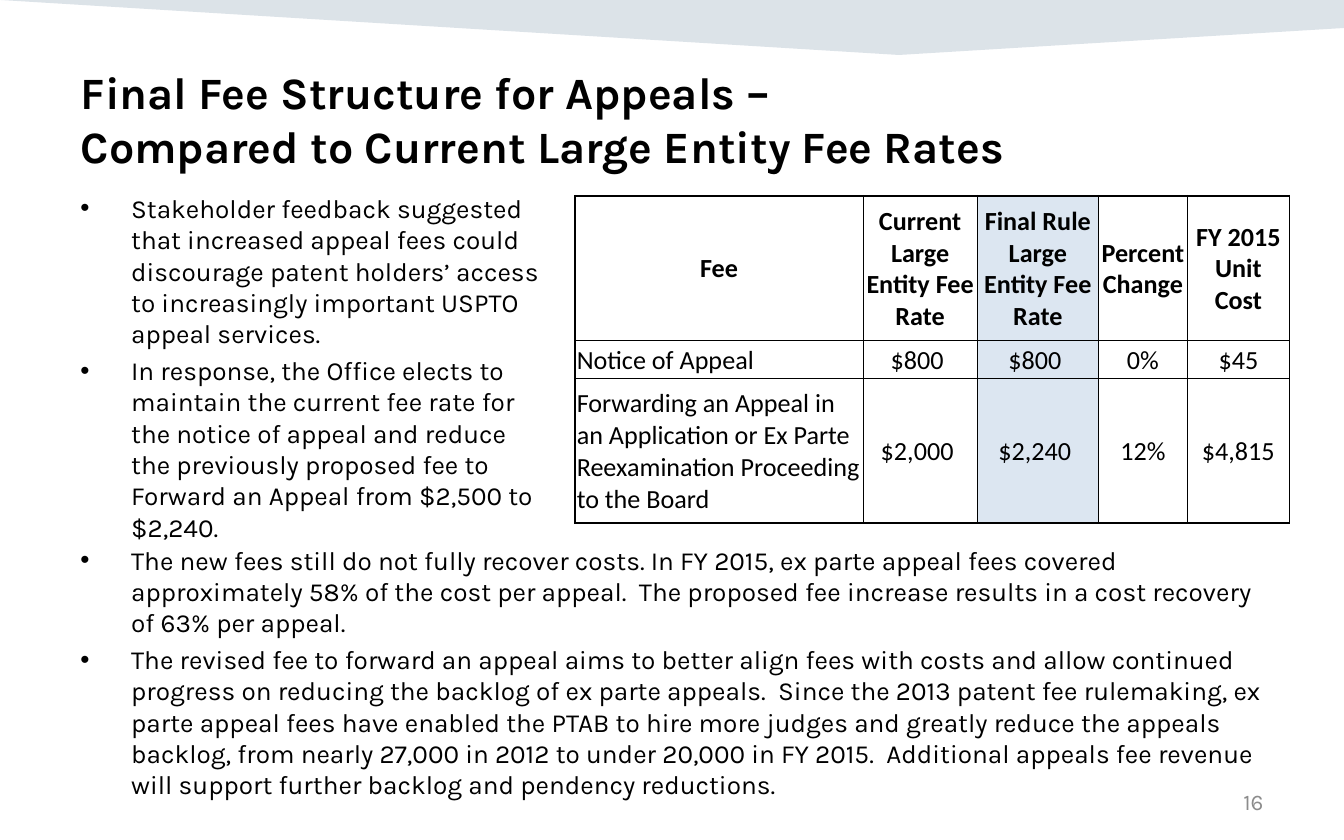
from dataclasses import dataclass

import lxml.etree
import pptx
import pptx.dml.color
import pptx.enum.text
import pptx.oxml.ns
import pptx.util

Cm = pptx.util.Cm
Pt = pptx.util.Pt
Align = pptx.enum.text.PP_ALIGN
Anchor = pptx.enum.text.MSO_ANCHOR
qn = pptx.oxml.ns.qn


@dataclass(frozen=True)
class Theme:
    text: str = "000000"
    muted: str = "8C8C8C"
    banner: str = "164469"
    highlight: str = "DCE6F1"
    white: str = "FFFFFF"
    font: str = "Karla"
    table_font: str = "Calibri"
    title_size: float = 24
    body_size: float = 14
    number_size: float = 12
    thin: float = 0.5
    thick: float = 1


@dataclass(frozen=True)
class Box:
    """A rectangle in centimetres."""
    left: float
    top: float
    width: float
    height: float

    def lengths(self) -> tuple:
        return Cm(self.left), Cm(self.top), Cm(self.width), Cm(self.height)


@dataclass(frozen=True)
class BulletList:
    box: Box
    items: tuple


THEME = Theme()
SLIDE_WIDTH, SLIDE_HEIGHT = 25.4, 15.88
BANNER_POINTS = ((0, 0), (SLIDE_WIDTH, 0), (SLIDE_WIDTH, 0.53), (16.99, 1.04))
TITLE = "Final Fee Structure for Appeals –\vCompared to Current Large Entity Fee Rates"
TITLE_BOX = Box(1.27, 1.04, 22.86, 2.41)
NUMBER_BOX = Box(18.21, 14.73, 5.92, 0.84)
TABLE_BOX = Box(10.87, 3.7, 13.5, 6.19)
INDENT = 0.96
CELL_INSET = 0.03
COLUMN_WIDTHS = (5.44, 2.16, 2.29, 1.68, 1.93)
ROW_HEIGHTS = (2.74, 0.71, 2.74)
HIGHLIGHT_COLUMN = 2
FEES = (
    ("Fee", "Current Large Entity Fee Rate", "Final Rule Large Entity Fee Rate",
     "Percent Change", "FY 2015 Unit Cost"),
    ("Notice of Appeal", "$800 ", "$800 ", "0%", "$45"),
    ("Forwarding an Appeal in an Application or Ex Parte Reexamination Proceeding "
     "to the Board", "$2,000 ", "$2,240 ", "12%", "$4,815"),
)
BULLET_LISTS = (
    BulletList(Box(1.27, 3.51, 9.22, 6.83), (
        "Stakeholder feedback suggested that increased appeal fees could discourage "
        "patent holders’ access to increasingly important USPTO appeal services.",
        "In response, the Office elects to maintain the current fee rate for the notice "
        "of appeal and reduce the previously proposed fee to Forward an Appeal from "
        "$2,500 to $2,240.",
    )),
    BulletList(Box(1.27, 10.16, 23.09, 5.41), (
        "The new fees still do not fully recover costs. In FY 2015, ex parte appeal fees "
        "covered approximately 58% of the cost per appeal.  The proposed fee increase "
        "results in a cost recovery of 63% per appeal.",
        "The revised fee to forward an appeal aims to better align fees with costs and "
        "allow continued progress on reducing the backlog of ex parte appeals.  Since the "
        "2013 patent fee rulemaking, ex parte appeal fees have enabled the PTAB to hire "
        "more judges and greatly reduce the appeals backlog, from nearly 27,000 in 2012 to "
        "under 20,000 in FY 2015.  Additional appeals fee revenue will support further "
        "backlog and pendency reductions.",
    )),
)


def rgb(color: str) -> pptx.dml.color.RGBColor:
    return pptx.dml.color.RGBColor.from_string(color)


def format_runs(paragraph, size: float, font: str = THEME.font,
                color: str = THEME.text, bold: bool = False) -> None:
    for run in paragraph.runs:
        run.font.name = font
        run.font.size = Pt(size)
        run.font.bold = bold
        run.font.color.rgb = rgb(color)


def draw_banner(slide) -> None:
    points = [(Cm(x), Cm(y)) for x, y in BANNER_POINTS]
    builder = slide.shapes.build_freeform(*points[0])
    builder.add_line_segments(points[1:], close=True)
    banner = builder.convert_to_shape()
    banner.shadow.inherit = False
    banner.line.fill.background()
    banner.fill.solid()
    banner.fill.fore_color.rgb = rgb(THEME.banner)
    color = banner.fill._xPr.find(".//" + qn("a:srgbClr"))
    lxml.etree.SubElement(color, qn("a:alpha"), val="15000")


def draw_title(slide) -> None:
    title = slide.shapes.title
    title.left, title.top, title.width, title.height = TITLE_BOX.lengths()
    frame = title.text_frame
    frame.text = TITLE
    frame.auto_size = pptx.enum.text.MSO_AUTO_SIZE.NONE
    frame.vertical_anchor = Anchor.MIDDLE
    frame.paragraphs[0].alignment = Align.LEFT
    format_runs(frame.paragraphs[0], THEME.title_size, bold=True)


def add_text_frame(slide, box: Box, text: str):
    frame = slide.shapes.add_textbox(*box.lengths()).text_frame
    frame.word_wrap = True
    frame.text = text
    return frame


def draw_bullets(slide, bullets: BulletList) -> None:
    frame = add_text_frame(slide, bullets.box, "\n".join(bullets.items))
    for paragraph in frame.paragraphs:
        paragraph.space_before = Pt(0.2 * THEME.body_size)
        format_runs(paragraph, THEME.body_size)
        properties = paragraph._p.get_or_add_pPr()
        properties.set("marL", str(Cm(INDENT)))
        properties.set("indent", str(-Cm(INDENT)))
        lxml.etree.SubElement(properties, qn("a:buFont"), typeface="Arial")
        lxml.etree.SubElement(properties, qn("a:buChar"), char="•")


def draw_number(slide) -> None:
    frame = add_text_frame(slide, NUMBER_BOX, "16")
    frame.vertical_anchor = Anchor.MIDDLE
    frame.paragraphs[0].alignment = Align.RIGHT
    format_runs(frame.paragraphs[0], THEME.number_size, color=THEME.muted)


def set_borders(cell, outer_edges: dict) -> None:
    """Draw thick lines on the table's outer edges and thin ones inside."""
    properties = cell._tc.get_or_add_tcPr()
    for position, (edge, is_outer) in enumerate(outer_edges.items()):
        width = Pt(THEME.thick if is_outer else THEME.thin)
        line = lxml.etree.Element(qn(f"a:{edge}"), w=str(width))
        fill = lxml.etree.SubElement(line, qn("a:solidFill"))
        lxml.etree.SubElement(fill, qn("a:srgbClr"), val=THEME.text)
        properties.insert(position, line)


def draw_table(slide) -> None:
    row_count, column_count = len(FEES), len(COLUMN_WIDTHS)
    table = slide.shapes.add_table(row_count, column_count, *TABLE_BOX.lengths()).table
    for column, width in zip(table.columns, COLUMN_WIDTHS):
        column.width = Cm(width)
    for row, height in zip(table.rows, ROW_HEIGHTS):
        row.height = Cm(height)
    for i, values in enumerate(FEES):
        for j, value in enumerate(values):
            cell = table.cell(i, j)
            cell.text = value
            cell.vertical_anchor = Anchor.MIDDLE
            cell.margin_left = cell.margin_right = cell.margin_top = Cm(CELL_INSET)
            cell.margin_bottom = 0
            cell.fill.solid()
            cell.fill.fore_color.rgb = rgb(
                THEME.highlight if j == HIGHLIGHT_COLUMN else THEME.white)
            paragraph = cell.text_frame.paragraphs[0]
            paragraph.alignment = Align.LEFT if i and not j else Align.CENTER
            format_runs(paragraph, THEME.body_size, THEME.table_font, bold=i == 0)
            set_borders(cell, {"lnL": j == 0, "lnR": j == column_count - 1,
                               "lnT": i == 0, "lnB": i == row_count - 1})


def main() -> None:
    presentation = pptx.Presentation()
    presentation.slide_width = Cm(SLIDE_WIDTH)
    presentation.slide_height = Cm(SLIDE_HEIGHT)
    slide = presentation.slides.add_slide(presentation.slide_layouts[5])
    draw_banner(slide)
    draw_title(slide)
    draw_number(slide)
    for bullets in BULLET_LISTS:
        draw_bullets(slide, bullets)
    draw_table(slide)
    presentation.save("out.pptx")


if __name__ == "__main__":
    main()
